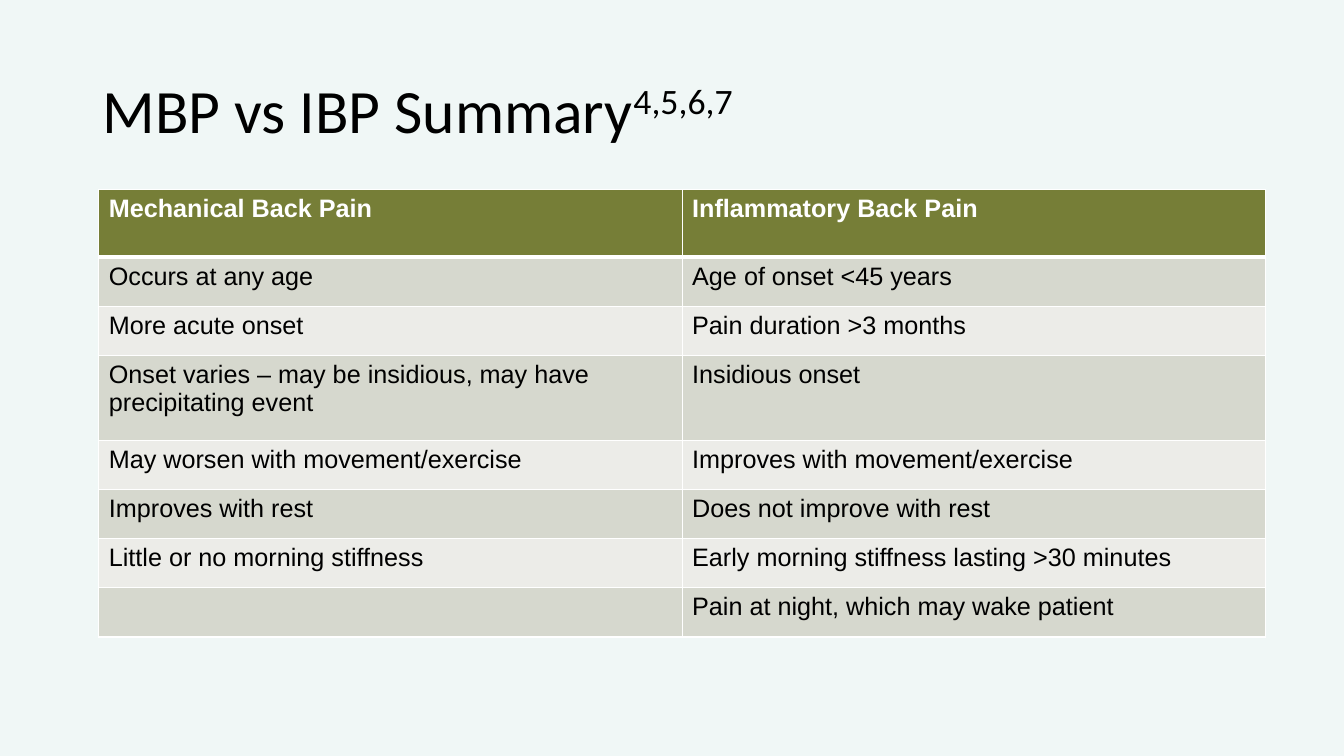
import pptx
import pptx.dml.color
import pptx.enum.text
import pptx.oxml
import pptx.oxml.ns
import pptx.util
from pptx.util import Cm

HEADINGS = ("Mechanical Back Pain", "Inflammatory Back Pain")
COMPARISONS = [
    ("Occurs at any age", "Age of onset <45 years"),
    ("More acute onset", "Pain duration >3 months"),
    ("Onset varies – may be insidious, may have precipitating event", "Insidious onset"),
    ("May worsen with movement/exercise", "Improves with movement/exercise"),
    ("Improves with rest", "Does not improve with rest"),
    ("Little or no morning stiffness", "Early morning stiffness lasting >30 minutes"),
    ("", "Pain at night, which may wake patient"),
]
COLUMN_WIDTH = 14.7
ROW_HEIGHTS = [1.7, 1.24, 1.24, 2.13, 1.24, 1.24, 1.24, 1.24]


def color(hex_text):
    return pptx.dml.color.RGBColor.from_string(hex_text)


class SummaryPage:
    title_font, table_font = "Calibri", "Arial"
    title_size, table_size = 44, 18
    background, ink, white = "F0F7F6", "000000", "FFFFFF"
    header, bands = "767E37", ("D6D8CE", "ECECE8")

    def __init__(self, deck):
        self.page = deck.slides.add_slide(deck.slide_layouts.get_by_name("Title Only"))
        fill = self.page.background.fill
        fill.solid()
        fill.fore_color.rgb = color(self.background)

    def format_font(self, font, name, size, hex_text, bold=False):
        font.name, font.size, font.bold = name, pptx.util.Pt(size), bold
        font.color.rgb = color(hex_text)

    def title(self, text, references):
        box = self.page.shapes.title
        box.left, box.top, box.width, box.height = Cm(2.33), Cm(1.01), Cm(29.21), Cm(3.68)
        frame = box.text_frame
        frame.text = text
        frame.word_wrap = True
        frame.auto_size = pptx.enum.text.MSO_AUTO_SIZE.NONE
        frame.vertical_anchor = pptx.enum.text.MSO_ANCHOR.MIDDLE
        para = frame.paragraphs[0]
        para.alignment = pptx.enum.text.PP_ALIGN.LEFT
        para.line_spacing = 0.9
        superscript = para.add_run()
        superscript.text = references
        for span in para.runs:
            self.format_font(span.font, self.title_font, self.title_size, self.ink)
        superscript._r.get_or_add_rPr().set("baseline", "30000")

    def borders(self, cell, top, bottom):
        # Border lines come before the fill in the cell properties
        properties = cell._tc.get_or_add_tcPr()
        widths = {"lnL": 1, "lnR": 1, "lnT": top, "lnB": bottom}
        for position, (side, points) in enumerate(widths.items()):
            line = pptx.oxml.parse_xml(
                f'<a:{side} {pptx.oxml.ns.nsdecls("a")} w="{pptx.util.Pt(points)}">'
                f'<a:solidFill><a:srgbClr val="{self.white}"/></a:solidFill></a:{side}>')
            properties.insert(position, line)

    def table(self, rows, left, top, column_width, row_heights):
        columns = len(rows[0])
        table = self.page.shapes.add_table(
            len(rows), columns, Cm(left), Cm(top),
            Cm(column_width * columns), Cm(sum(row_heights))).table
        for column in table.columns:
            column.width = Cm(column_width)
        for index, (texts, height) in enumerate(zip(rows, row_heights)):
            table.rows[index].height = Cm(height)
            heading = index == 0
            for cell, text in zip(table.rows[index].cells, texts):
                cell.text = text
                cell.fill.solid()
                cell.fill.fore_color.rgb = color(
                    self.header if heading else self.bands[(index - 1) % 2])
                self.borders(cell, 3 if index == 1 else 1, 3 if heading else 1)
                for span in cell.text_frame.paragraphs[0].runs:
                    self.format_font(span.font, self.table_font, self.table_size,
                                     self.white if heading else self.ink, heading)


def main():
    deck = pptx.Presentation()
    deck.slide_width, deck.slide_height = Cm(33.87), Cm(19.05)
    summary = SummaryPage(deck)

    # Title with reference numbers
    summary.title("MBP vs IBP Summary", "4,5,6,7")

    # Comparison table
    summary.table([HEADINGS] + COMPARISONS, 2.49, 4.78, COLUMN_WIDTH, ROW_HEIGHTS)

    deck.save("out.pptx")


if __name__ == "__main__":
    main()
